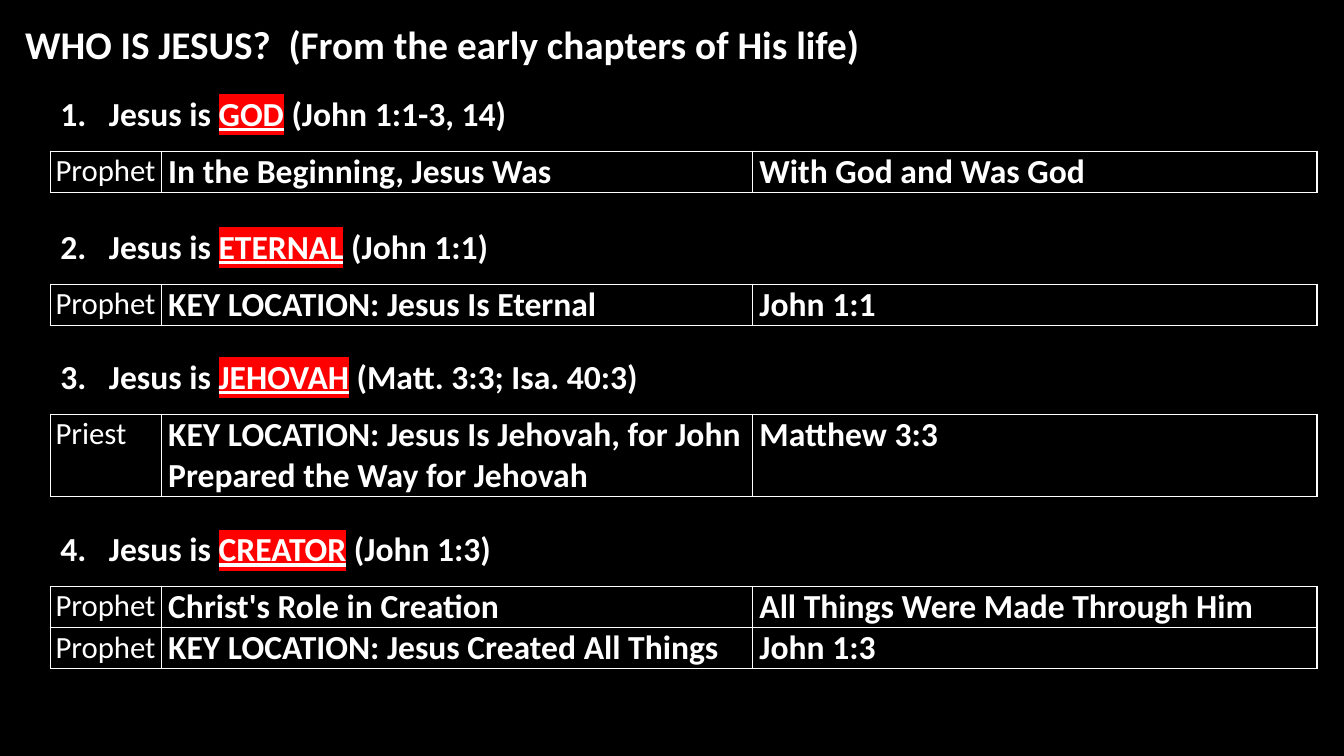
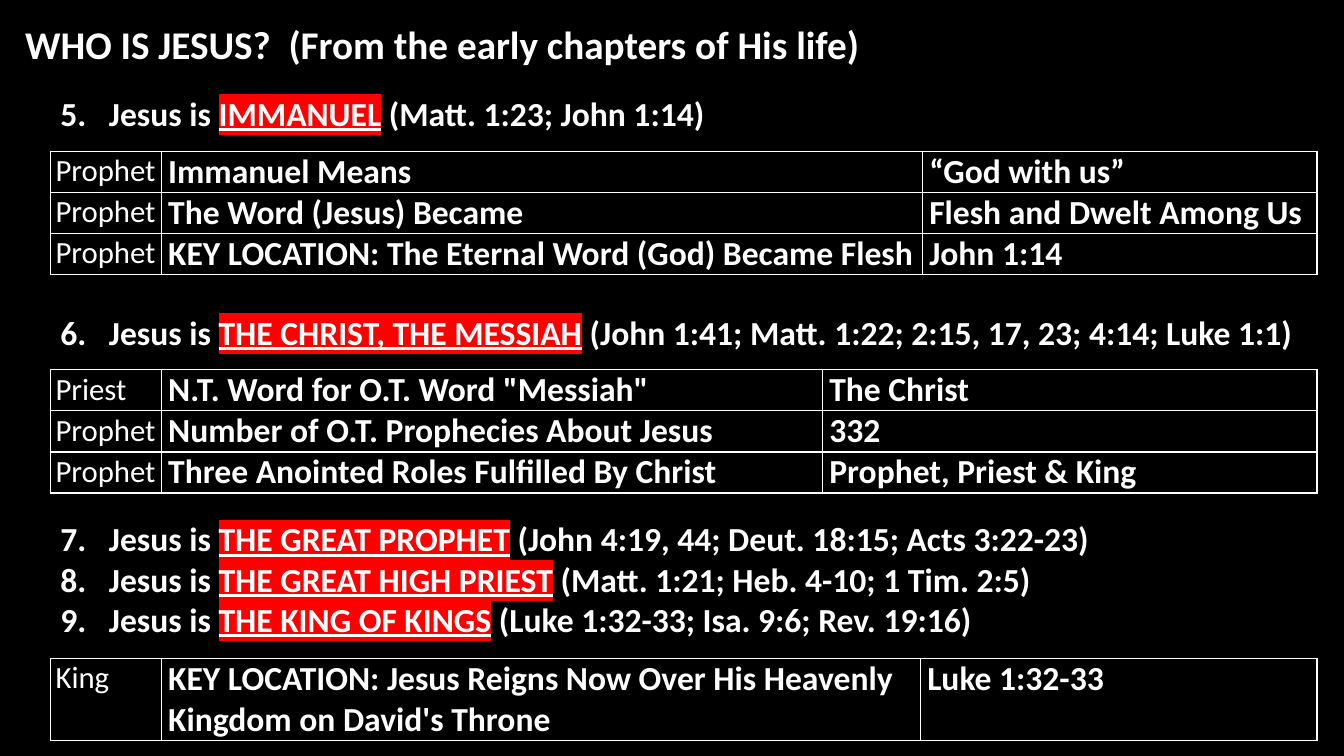
"""Build two slides on who Jesus is, as numbered statements with answer tables."""
from lxml import etree
from pptx import Presentation
from pptx.dml.color import RGBColor
from pptx.enum.text import MSO_ANCHOR, MSO_AUTO_SIZE, PP_ALIGN
from pptx.oxml.ns import qn
from pptx.util import Cm, Pt

TOP = MSO_ANCHOR.TOP
LEFT = PP_ALIGN.LEFT
NO_AUTOFIT = MSO_AUTO_SIZE.NONE
COMPARISON_LAYOUT = 4

COLORS = {"background": "000000", "text": "FFFFFF", "highlight": "FF0000"}
FONT = "Calibri"
TITLE = "WHO IS JESUS?  (From the early chapters of His life)"
TITLE_SIZE, BODY_SIZE, ROLE_SIZE = 28, 24, 22

MARGIN = 1.27
TABLE_WIDTH = 31.92
ROLE_WIDTH = 2.8
LINE_HEIGHT = 1.03
STATEMENT_HEIGHT = 1.27
TABLE_OFFSET = 1.6
NUMBER_INDENT = 1.22


def rgb(name):
    return RGBColor.from_string(COLORS[name])


def add_color(parent, name):
    etree.SubElement(parent, qn("a:srgbClr"), val=COLORS[name])


class Deck:
    def __init__(self):
        self.presentation = Presentation()
        self.presentation.slide_width = Cm(33.87)
        self.presentation.slide_height = Cm(19.05)
        background = self.presentation.slide_master.background.fill
        background.solid()
        background.fore_color.rgb = rgb("background")
        self.slide = None
        self.bodies = []

    def start_slide(self):
        layout = self.presentation.slide_layouts[COMPARISON_LAYOUT]
        self.slide = self.presentation.slides.add_slide(layout)
        title, *self.bodies = self.slide.placeholders
        self.place(title, 0.38, 0.38, 29.62, 1.45)
        title.text_frame.text = TITLE
        self.style_paragraph(title.text_frame.paragraphs[0], TITLE_SIZE)

    def finish_slide(self):
        for body in self.bodies:
            body.element.getparent().remove(body.element)

    def place(self, shape, left, top, width, height):
        shape.left, shape.top = Cm(left), Cm(top)
        shape.width, shape.height = Cm(width), Cm(height)
        text_frame = shape.text_frame
        text_frame.auto_size = NO_AUTOFIT
        text_frame.word_wrap = True
        text_frame.vertical_anchor = TOP

    def style_paragraph(self, paragraph, size, bold=True):
        paragraph.alignment = LEFT
        paragraph.space_before = Pt(0)
        for run in paragraph.runs:
            self.style_run(run, size, bold)

    def style_run(self, run, size, bold):
        run.font.size = Pt(size)
        run.font.bold = bold
        run.font.color.rgb = rgb("text")
        run.font.name = FONT

    def highlight(self, run):
        run.font.underline = True
        mark = etree.Element(qn("a:highlight"))
        add_color(mark, "highlight")
        run.font._element.find(qn("a:solidFill")).addnext(mark)

    def number(self, paragraph, value):
        properties = paragraph._p.get_or_add_pPr()
        properties.set("marL", str(Cm(NUMBER_INDENT)))
        properties.set("indent", str(-Cm(NUMBER_INDENT)))
        etree.SubElement(properties, qn("a:buFont"), typeface=FONT)
        etree.SubElement(properties, qn("a:buAutoNum"),
                         type="arabicPeriod", startAt=str(value))

    def statements(self, top, first, items, width):
        body = self.bodies.pop(0)
        height = STATEMENT_HEIGHT + (len(items) - 1) * LINE_HEIGHT
        self.place(body, MARGIN, top, width, height)
        text_frame = body.text_frame
        for index, (name, reference) in enumerate(items):
            paragraph = text_frame.add_paragraph() if index else text_frame.paragraphs[0]
            for text in ("Jesus is ", name, f" ({reference})"):
                paragraph.add_run().text = text
            self.style_paragraph(paragraph, BODY_SIZE)
            self.highlight(paragraph.runs[1])
            self.number(paragraph, first)

    def border(self, cell):
        properties = cell._tc.get_or_add_tcPr()
        for side in ("a:lnL", "a:lnR", "a:lnT", "a:lnB"):
            line = etree.SubElement(properties, qn(side), w=str(Pt(1)))
            add_color(etree.SubElement(line, qn("a:solidFill")), "text")

    def table(self, top, rows, question_width, lines):
        row_height = Cm(LINE_HEIGHT * lines)
        frame = self.slide.shapes.add_table(
            len(rows), 3, Cm(MARGIN), Cm(top), Cm(TABLE_WIDTH), row_height * len(rows))
        table = frame.table
        table.first_row = table.horz_banding = False
        widths = (ROLE_WIDTH, question_width, TABLE_WIDTH - ROLE_WIDTH - question_width)
        for column, width in zip(table.columns, widths):
            column.width = Cm(width)
        for row, texts in zip(table.rows, rows):
            row.height = row_height
            for index, (cell, text) in enumerate(zip(row.cells, texts)):
                self.fill_cell(cell, text, is_role=index == 0)

    def fill_cell(self, cell, text, is_role):
        left, top, right = (0.13, 0.03, 0.03) if is_role else (0.17, 0, 0.17)
        self.border(cell)
        cell.fill.background()
        cell.margin_left, cell.margin_right = Cm(left), Cm(right)
        cell.margin_top, cell.margin_bottom = Cm(top), Cm(0)
        cell.vertical_anchor = TOP
        cell.text_frame.text = text
        self.style_paragraph(cell.text_frame.paragraphs[0],
                             ROLE_SIZE if is_role else BODY_SIZE, bold=not is_role)

    def section(self, top, first, items, rows, question_width=14.9, lines=1, width=30.73):
        self.statements(top, first, items, width)
        table_top = top + TABLE_OFFSET + (len(items) - 1) * LINE_HEIGHT
        self.table(table_top, rows, question_width, lines)


def main():
    deck = Deck()

    deck.start_slide()
    deck.section(2.21, 1, [("GOD", "John 1:1-3, 14")],
                 [("Prophet", "In the Beginning, Jesus Was", "With God and Was God")])
    deck.section(5.56, 2, [("ETERNAL", "John 1:1")],
                 [("Prophet", "KEY LOCATION: Jesus Is Eternal", "John 1:1")])
    deck.section(8.84, 3, [("JEHOVAH", "Matt. 3:3; Isa. 40:3")],
                 [("Priest",
                   "KEY LOCATION: Jesus Is Jehovah, for John Prepared the Way for Jehovah",
                   "Matthew 3:3")], lines=2)
    deck.section(13.18, 4, [("CREATOR", "John 1:3")],
                 [("Prophet", "Christ's Role in Creation", "All Things Were Made Through Him"),
                  ("Prophet", "KEY LOCATION: Jesus Created All Things", "John 1:3")])
    deck.finish_slide()

    deck.start_slide()
    deck.section(2.21, 5, [("IMMANUEL", "Matt. 1:23; John 1:14")],
                 [("Prophet", "Immanuel Means", "“God with us”"),
                  ("Prophet", "The Word (Jesus) Became", "Flesh and Dwelt Among Us"),
                  ("Prophet", "KEY LOCATION: The Eternal Word (God) Became Flesh", "John 1:14")],
                 question_width=19.18)
    deck.section(7.72, 6, [("THE CHRIST, THE MESSIAH",
                            "John 1:41; Matt. 1:22; 2:15, 17, 23; 4:14; Luke 1:1")],
                 [("Priest", 'N.T. Word for O.T. Word "Messiah"', "The Christ"),
                  ("Prophet", "Number of O.T. Prophecies About Jesus", "332"),
                  ("Prophet", "Three Anointed Roles Fulfilled By Christ",
                   "Prophet, Priest & King")],
                 question_width=16.66, width=32.28)
    deck.section(12.93, 7, [("THE GREAT PROPHET", "John 4:19, 44; Deut. 18:15; Acts 3:22-23"),
                            ("THE GREAT HIGH PRIEST", "Matt. 1:21; Heb. 4-10; 1 Tim. 2:5"),
                            ("THE KING OF KINGS", "Luke 1:32-33; Isa. 9:6; Rev. 19:16")],
                 [("King",
                   "KEY LOCATION: Jesus Reigns Now Over His Heavenly Kingdom on David's Throne",
                   "Luke 1:32-33")], question_width=19.13, lines=2)
    deck.finish_slide()

    deck.presentation.save("out.pptx")


if __name__ == "__main__":
    main()
